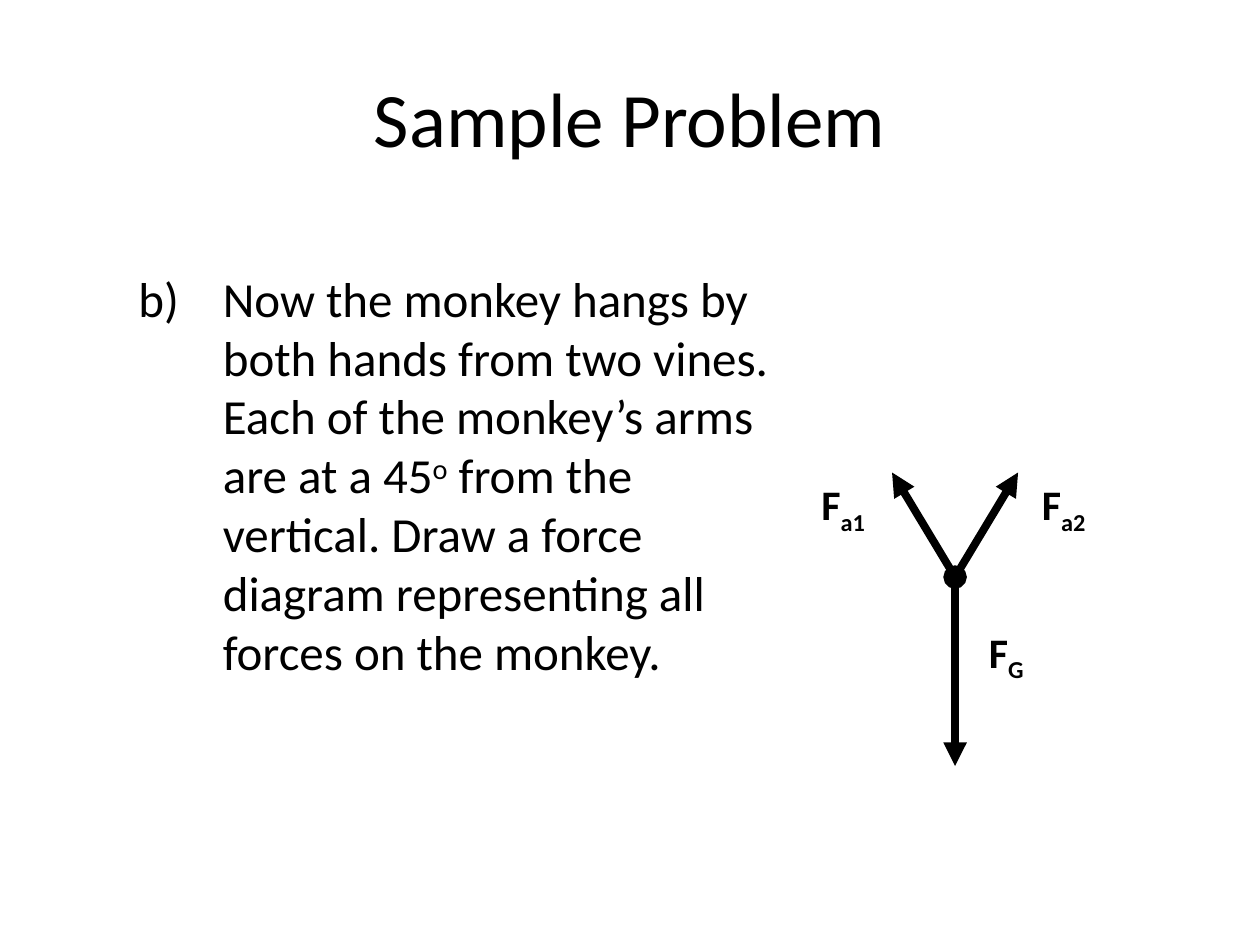
"""Build the sample problem slide with a force diagram."""
from lxml import etree
from pptx import Presentation
from pptx.dml.color import RGBColor
from pptx.enum import shapes, text
from pptx.oxml import ns
from pptx.util import Inches, Pt


def ink(color, code="000000"):
    color.rgb = RGBColor.from_string(code)


def write(spot, runs, size, bold=False, wrap=True):
    box = slide.shapes.add_textbox(*[Inches(v) for v in spot])
    box.text_frame.word_wrap = wrap
    para = box.text_frame.paragraphs[0]
    para.font.name, para.font.size, para.font.bold = "Calibri", Pt(size), bold
    ink(para.font.color)
    for words, shift in runs:
        run = para.add_run()
        run.text = words
        if shift:
            run._r.get_or_add_rPr().set("baseline", str(shift * 1000))
    return box.text_frame, para


deck = Presentation()
deck.slide_width, deck.slide_height = Inches(10), Inches(7.5)
slide = deck.slides.add_slide(deck.slide_layouts[6])

frame, para = write((0.5, 0.3, 9, 1.25), [("Sample Problem", 0)], 44)
frame.vertical_anchor = text.MSO_ANCHOR.MIDDLE
para.alignment = text.PP_ALIGN.CENTER

frame, para = write((1, 2.08, 5.25, 4.75), [
    ("Now the monkey hangs by both hands from two vines. "
     "Each of the monkey’s arms are at a 45", 0),
    ("o", 30),
    (" from the vertical. Draw a force diagram representing "
     "all forces on the monkey.", 0)], 28)
para.space_before = Pt(5.6)
props = para._p.get_or_add_pPr()
props.set("marL", str(Inches(0.67)))
props.set("indent", str(-Inches(0.67)))
mark = etree.Element(ns.qn("a:buAutoNum"), type="alphaLcParenR", startAt="2")
props.find(ns.qn("a:defRPr")).addprevious(mark)

hub = (7.58, 4.58)
for tip, head in [((7.58, 6.08), "oval"), ((8.08, 3.75), None), ((7.08, 3.75), None)]:
    force = slide.shapes.add_connector(
        shapes.MSO_CONNECTOR.STRAIGHT, *[Inches(v) for v in hub + tip])
    force.line.width = Pt(4.5)
    ink(force.line.color)
    line = force.line._get_or_add_ln()
    if head:
        etree.SubElement(line, ns.qn("a:headEnd"), type=head)
    etree.SubElement(line, ns.qn("a:tailEnd"), type="triangle")
    etree.SubElement(force._element.spPr, ns.qn("a:effectLst"))

for left, top, width, sub in [(7.75, 4.92, 0.56, "G"), (6.42, 3.75, 0.66, "a1"),
                              (8.17, 3.75, 0.66, "a2")]:
    frame, para = write((left, top, width, 0.5), [("F", 0), (sub, -25)], 24, True, False)
    frame.auto_size = text.MSO_AUTO_SIZE.SHAPE_TO_FIT_TEXT

deck.save("out.pptx")
